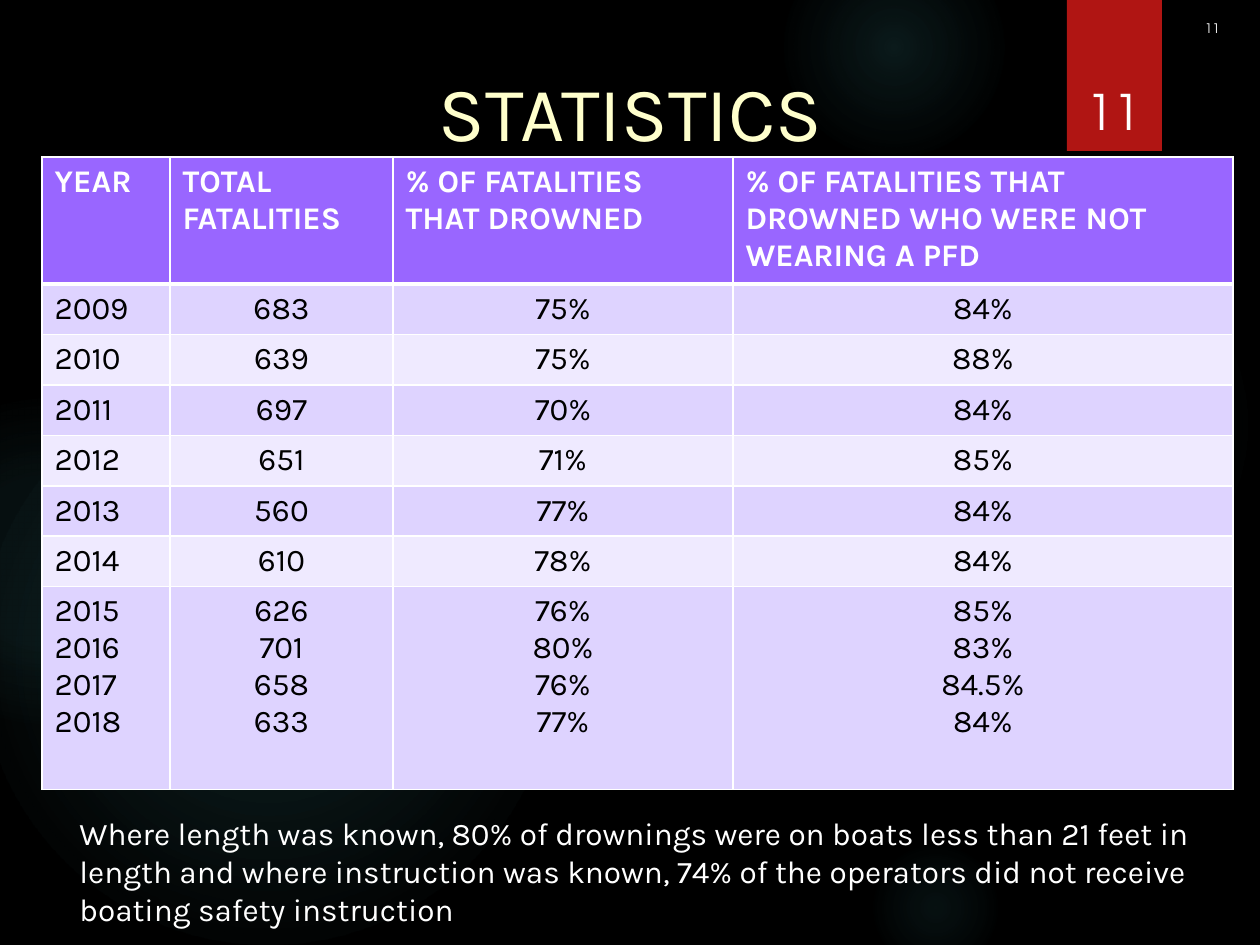
from lxml import etree
from pptx import Presentation
from pptx import util as u
from pptx.dml.color import RGBColor
from pptx.enum import shapes, text
from pptx.oxml import parse_xml
from pptx.oxml.ns import nsdecls, qn

PX = 914400 // 126
WHITE = RGBColor(0xFF, 0xFF, 0xFF)
BLACK = RGBColor(0, 0, 0)
RED = RGBColor(0xB0, 0x15, 0x13)
CREAM = RGBColor(0xFF, 0xFF, 0xCC)
PURPLE = RGBColor(0x99, 0x66, 0xFF)
LILAC = RGBColor(0xDE, 0xD3, 0xFF)
PALE = RGBColor(0xEF, 0xEA, 0xFF)
GLOW = RGBColor(0x50, 0xB9, 0xC1)
LEFT, MID, RIGHT = text.PP_ALIGN.LEFT, text.PP_ALIGN.CENTER, text.PP_ALIGN.RIGHT
TOP, CENTER, BOTTOM = text.MSO_ANCHOR.TOP, text.MSO_ANCHOR.MIDDLE, text.MSO_ANCHOR.BOTTOM

deck = Presentation()
deck.slide_width, deck.slide_height = 1260 * PX, 945 * PX
slide = deck.slides.add_slide(deck.slide_layouts[6])
slide.background.fill.solid()
slide.background.fill.fore_color.rgb = BLACK


def write(frame, lines, size, font, color, align, bold=False):
    """Fill a text frame with one paragraph per line."""
    frame.text = "\n".join(lines)
    for para in frame.paragraphs:
        para.alignment = align
        para.font.size = u.Pt(size)
        para.font.name = font
        para.font.bold = bold
        para.font.color.rgb = color


# Glowing circles: left, top, diameter, then (position, opacity) stops in percent
glows = [
    (868, 231, 388, [(0, 7), (36, 6), (69, 0)]),
    (784, -63, 220, [(0, 14), (36, 7), (73, 0)]),
    (868, 840, 136, [(0, 9), (36, 5), (66, 0)]),
    (-21, 368, 577, [(0, 11), (36, 10), (75, 0)]),
    (-116, 399, 325, [(0, 8), (36, 8), (72, 0)]),
]
for x, y, d, stops in glows:
    disc = slide.shapes.add_shape(
        shapes.MSO_SHAPE.OVAL, x * PX, y * PX, d * PX, d * PX)
    disc.shadow.inherit = False
    disc.line.fill.background()
    marks = "".join(
        f'<a:gs pos="{pos * 1000}"><a:srgbClr val="{GLOW}">'
        f'<a:alpha val="{alpha * 1000}"/></a:srgbClr></a:gs>'
        for pos, alpha in stops)
    grad = parse_xml(
        f'<a:gradFill {nsdecls("a")}><a:gsLst>{marks}</a:gsLst>'
        '<a:path path="circle"><a:fillToRect l="50000" t="50000" '
        'r="50000" b="50000"/></a:path></a:gradFill>')
    disc.fill.background()
    old = disc.element.spPr.find(qn("a:noFill"))
    disc.element.spPr.replace(old, grad)

# Red page tab
tab = slide.shapes.add_shape(
    shapes.MSO_SHAPE.RECTANGLE, 1067 * PX, 0, 95 * PX, 151 * PX)
tab.fill.solid()
tab.fill.fore_color.rgb = RED
tab.line.fill.background()
tab.shadow.inherit = False
tab.element.spPr.find(qn("a:effectLst")).append(parse_xml(
    f'<a:outerShdw {nsdecls("a")} blurRad="38100" dist="25400" dir="5400000" '
    'rotWithShape="0"><a:srgbClr val="000000"><a:alpha val="45000"/>'
    '</a:srgbClr></a:outerShdw>'))

# Text boxes: left, top, width, height, inset, anchor, words, size, font, colour, align
note = ("Where length was known, 80% of drownings were on boats less than 21 feet in "
        "length and where instruction was known, 74% of the operators did not receive "
        "boating safety instruction")
boxes = [
    (1153, 20, 79, 16, 0, TOP, "11", 7.5, "TeX Gyre Adventor", WHITE, RIGHT),
    (1070, 40, 87, 106, 6, BOTTOM, "11", 28, "TeX Gyre Adventor", WHITE, MID),
    (42, 32, 1177, 158, 6, CENTER, "STATISTICS", 44, "Karla", CREAM, MID),
    (67, 808, 1166, 127, 6, TOP, note, 18, "Karla", WHITE, LEFT),
]
for x, y, w, h, inset, anchor, words, size, font, color, align in boxes:
    frame = slide.shapes.add_textbox(x * PX, y * PX, w * PX, h * PX).text_frame
    frame.word_wrap = True
    frame.vertical_anchor = anchor
    frame.margin_top = frame.margin_bottom = inset * PX
    write(frame, [words], size, font, color, align)

# Fatalities table; a cell with several lines holds one paragraph per line
rows = [
    ["YEAR", "TOTAL FATALITIES", "% OF FATALITIES THAT DROWNED",
     "% OF FATALITIES THAT DROWNED WHO WERE NOT WEARING A PFD"],
    ["2009", "683", "75%", "84%"],
    ["2010", "639", "75%", "88%"],
    ["2011", "697", "70%", "84%"],
    ["2012", "651", "71%", "85%"],
    ["2013", "560", "77%", "84%"],
    ["2014", "610", "78%", "84%"],
    ["2015\n2016\n2017\n2018", "626\n701\n658\n633",
     "76%\n80%\n76%\n77%", "85%\n83%\n84.5%\n84%"],
]
widths = [128, 223, 340, 500]
heights = [127] + [50] * 6 + [203]
grid = slide.shapes.add_table(
    len(rows), len(widths), 42 * PX, 157 * PX,
    sum(widths) * PX, sum(heights) * PX).table
for col, w in zip(grid.columns, widths):
    col.width = w * PX
for r, (row, h) in enumerate(zip(rows, heights)):
    grid.rows[r].height = h * PX
    head = r == 0
    for c, words in enumerate(row):
        cell = grid.cell(r, c)
        cell.fill.solid()
        cell.fill.fore_color.rgb = PURPLE if head else LILAC if r % 2 else PALE
        write(cell.text_frame, words.split("\n"), 18, "Karla",
              WHITE if head else BLACK, LEFT if head or c == 0 else MID, head)
        props = cell._tc.get_or_add_tcPr()
        for i, side in enumerate("LRTB"):
            thick = (r, side) in [(0, "B"), (1, "T")]
            edge = etree.Element(qn(f"a:ln{side}"), w=str(u.Pt(3 if thick else 1)))
            fill = etree.SubElement(edge, qn("a:solidFill"))
            etree.SubElement(fill, qn("a:srgbClr"), val=str(WHITE))
            props.insert(i, edge)

deck.save("out.pptx")
